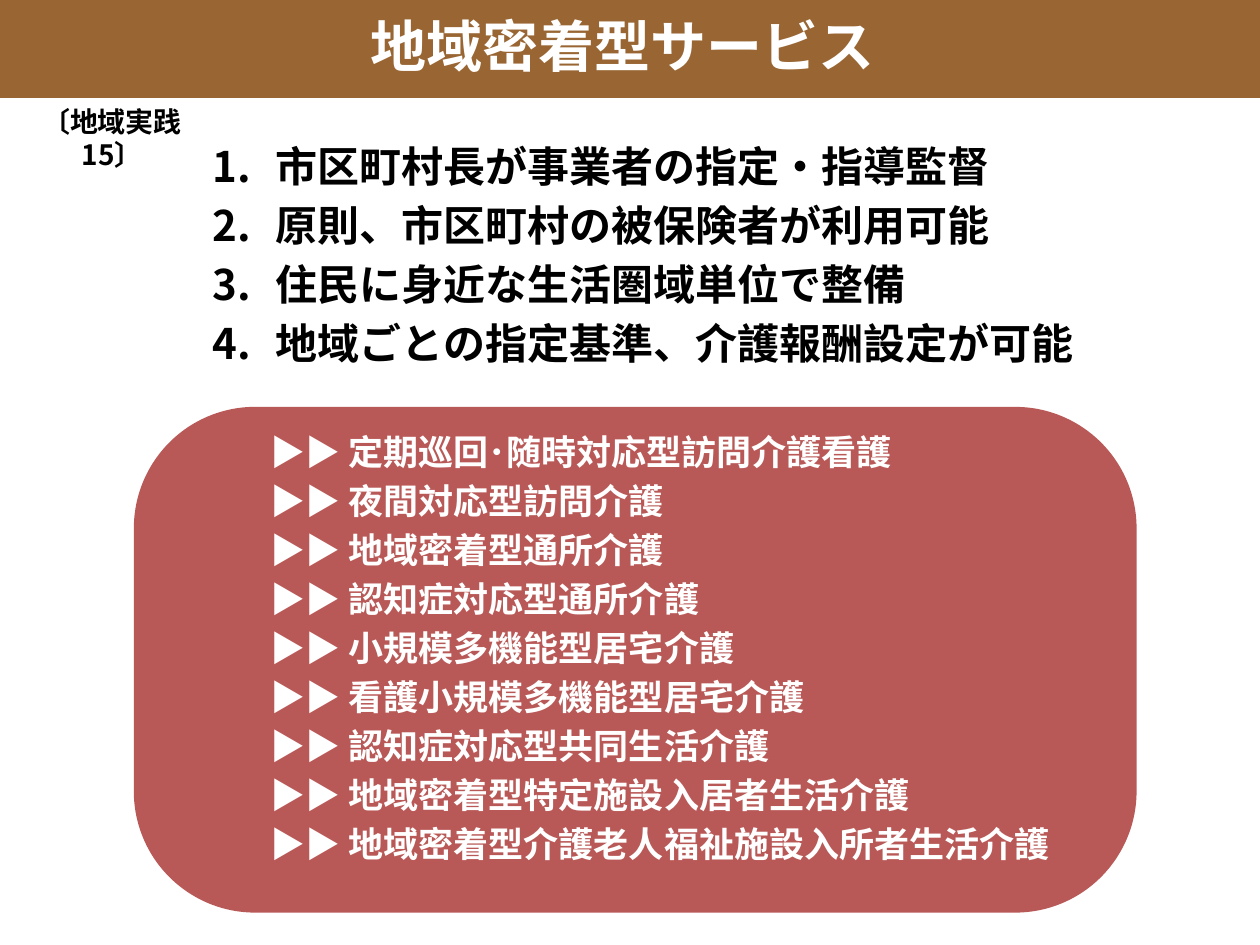
from lxml import etree
from pptx import Presentation
from pptx.dml.color import RGBColor
from pptx.enum.shapes import MSO_SHAPE
from pptx.enum.text import MSO_ANCHOR, MSO_AUTO_SIZE, PP_ALIGN
from pptx.oxml.ns import qn
from pptx.util import Pt

RECT, ROUNDED = MSO_SHAPE.RECTANGLE, MSO_SHAPE.ROUNDED_RECTANGLE
TOP, MIDDLE = MSO_ANCHOR.TOP, MSO_ANCHOR.MIDDLE
LEFT, CENTER = PP_ALIGN.LEFT, PP_ALIGN.CENTER
NO_FIT = MSO_AUTO_SIZE.NONE
FONT = "Noto Sans CJK JP"
WHITE, BLACK, BROWN, RED = "FFFFFF", "000000", "996633", "B95957"

FEATURES = [
    "市区町村長が事業者の指定・指導監督",
    "原則、市区町村の被保険者が利用可能",
    "住民に身近な生活圏域単位で整備",
    "地域ごとの指定基準、介護報酬設定が可能",
]
SERVICES = [
    "定期巡回･随時対応型訪問介護看護",
    "夜間対応型訪問介護",
    "地域密着型通所介護",
    "認知症対応型通所介護",
    "小規模多機能型居宅介護",
    "看護小規模多機能型居宅介護",
    "認知症対応型共同生活介護",
    "地域密着型特定施設入居者生活介護",
    "地域密着型介護老人福祉施設入所者生活介護",
]


def rgb(value):
    return RGBColor.from_string(value)


def add_block(s, kind, x, y, w, h, color):
    sp = s.shapes.add_shape(kind, Pt(x), Pt(y), Pt(w), Pt(h))
    sp.shadow.inherit = False
    sp.fill.solid()
    sp.fill.fore_color.rgb = rgb(color)
    sp.line.fill.background()
    return sp


def write(tf, lines, size, color, align=LEFT, anchor=TOP):
    """Fill a text frame with one bold paragraph per line."""
    tf.word_wrap = True
    tf.auto_size = NO_FIT
    tf.vertical_anchor = anchor
    tf.text = "\n".join(lines)
    for p in tf.paragraphs:
        p.alignment = align
        for r in p.runs:
            r.font.size = Pt(size)
            r.font.bold = True
            r.font.name = FONT
            r.font.color.rgb = rgb(color)
            etree.SubElement(r.font._element, qn("a:ea"), typeface=FONT)


def add_text(s, x, y, w, h, *args, **kwargs):
    tf = s.shapes.add_textbox(Pt(x), Pt(y), Pt(w), Pt(h)).text_frame
    write(tf, *args, **kwargs)
    return tf


def indent(p, margin, hanging):
    pPr = p._p.get_or_add_pPr()
    pPr.set("marL", str(Pt(margin)))
    pPr.set("indent", str(-Pt(hanging)))
    return pPr


def add_title(s, x, y, w, h):
    add_block(s, RECT, x, y, w, h, BROWN)
    title = s.shapes.title
    title.left, title.top = Pt(x + 204.5), Pt(y)
    title.width, title.height = Pt(337), Pt(h - 4)
    write(title.text_frame, ["地域密着型サービス"], 32, WHITE, anchor=MIDDLE)
    title.element.getparent().append(title.element)  # in front of the band


def add_features(s, x, y, w, h):
    tf = add_text(s, x, y, w, h, FEATURES, 24, BLACK)
    for p in tf.paragraphs:
        p.space_before = Pt(5)
        pPr = indent(p, 64, 36)
        etree.SubElement(pPr, qn("a:buFont"), typeface=FONT)
        etree.SubElement(pPr, qn("a:buAutoNum"), type="arabicPeriod")


def add_services(s, x, y, w, h):
    panel = add_block(s, ROUNDED, x, y, w, h, RED)
    panel.adjustments[0] = 0.24
    lines = ["▶▶ " + name for name in SERVICES]
    tf = add_text(s, x + 43, y + 10, w - 75, h - 49, lines, 20, WHITE)
    for p in tf.paragraphs:
        p.line_spacing = Pt(24)
        p.space_before = Pt(4)
        indent(p, 57, 29)


def main():
    prs = Presentation()
    prs.slide_width, prs.slide_height = Pt(720), Pt(540)
    s = prs.slides.add_slide(prs.slide_layouts[5])
    add_services(s, 76.5, 232.5, 573, 289)
    add_features(s, 86.5, 76.5, 546.5, 148)
    add_title(s, 0, 0, 720, 56)
    add_text(s, 0, 56, 128, 27, ["〔地域実践15〕"], 16, BLACK, align=CENTER)
    prs.save("out.pptx")


if __name__ == "__main__":
    main()
